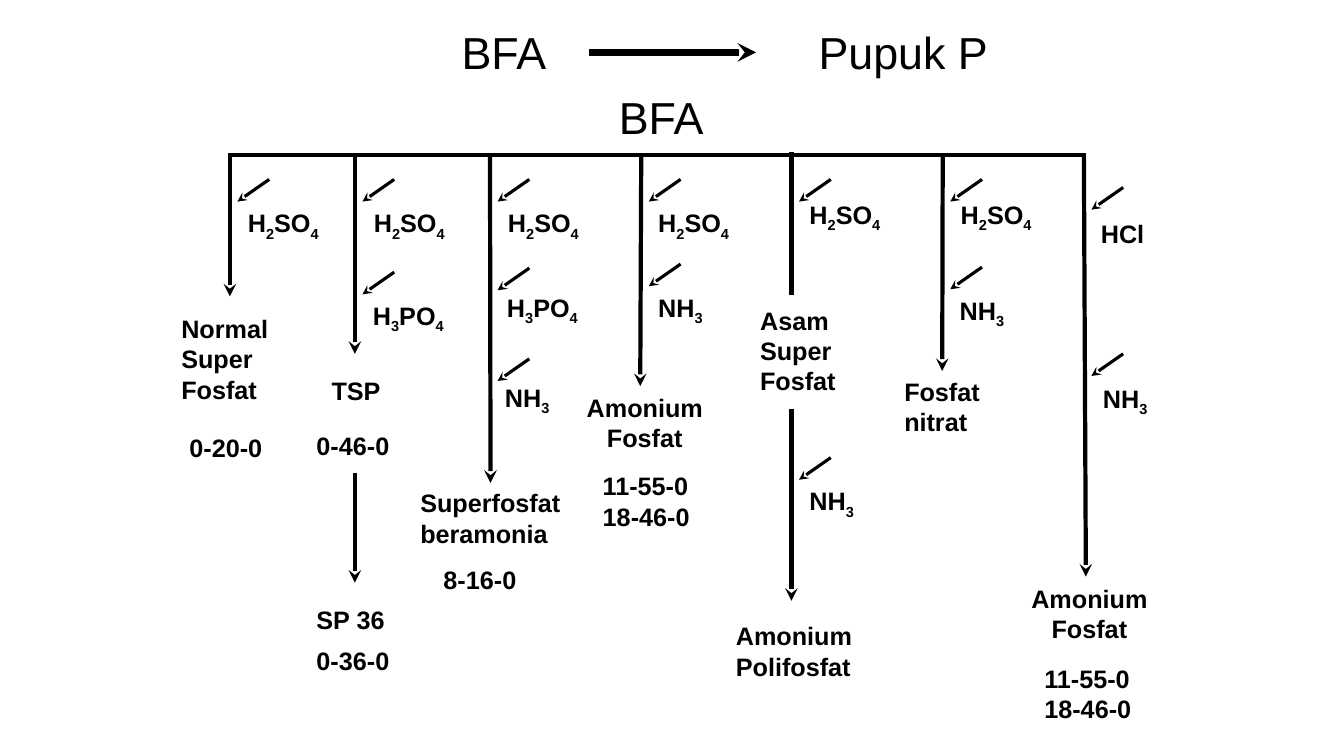
from itertools import groupby
from lxml.etree import SubElement
from pptx import Presentation
from pptx.dml.color import RGBColor
from pptx.enum.shapes import MSO_CONNECTOR as Link
from pptx.enum.text import MSO_AUTO_SIZE as Fit, PP_ALIGN as Align
from pptx.oxml.ns import qn
from pptx.util import Inches, Pt


def tint(code):
    return RGBColor.from_string(code)


class Chart:
    """Draws labels and lines on a slide ruled in columns and rows of a tenth of an inch."""

    font = "Arial"
    ink = "000000"
    unit = Inches(0.1)

    def __init__(self, deck):
        self.slide = deck.slides.add_slide(deck.slide_layouts[6])

    def at(self, *cells):
        return [round(cell * self.unit) for cell in cells]

    def style(self, run, size, bold):
        run.font.name = self.font
        run.font.size = Pt(size)
        run.font.bold = bold
        run.font.color.rgb = tint(self.ink)

    def frame(self, col, row, wide, high):
        box = self.slide.shapes.add_textbox(*self.at(col, row, wide, high))
        box.text_frame.word_wrap = False
        box.text_frame.auto_size = Fit.SHAPE_TO_FIT_TEXT
        return box

    def label(self, text, col, row, wide, size=18, bold=True, mid=False):
        count = text.count("\n") + 1
        box = self.frame(col, row, wide, 1 + count * size / 6)
        box.text_frame.text = text
        for para in box.text_frame.paragraphs:
            para.alignment = Align.CENTER if mid else Align.LEFT
            for run in para.runs:
                self.style(run, size, bold)
        return box

    def title(self, text, col, row, wide):
        return self.label(text, col, row, wide, size=32, bold=False)

    def formula(self, text, col, row):
        wide = {"NH3": 6.5, "HCl": 6.3}.get(text, 9.3)
        para = self.frame(col, row, wide, 4).text_frame.paragraphs[0]
        for low, part in groupby(text, str.isdigit):
            run = para.add_run()
            run.text = "".join(part)
            self.style(run, 18, True)
            if low:
                run.font._element.set("baseline", "-25000")

    def line(self, start, end, width=3, head=True, goal=None):
        line = self.slide.shapes.add_connector(
            Link.STRAIGHT, *self.at(*start, *end))
        line.line.color.rgb = tint(self.ink)
        line.line.width = Pt(width)
        if head:
            SubElement(line.line._get_or_add_ln(), qn("a:tailEnd"), type="stealth")
        SubElement(line._element.spPr, qn("a:effectLst"))
        if goal is not None:
            line.end_connect(goal, 0)

    def dose(self, text, stem, row, col, base):
        self.line((stem + 3.9, row), (stem + 0.75, row + 2.2), width=2.25)
        self.formula(text, col, base)


TITLES = [("BFA", 44.8, 2, 10.7), ("Pupuk P", 80.2, 2, 18.8), ("BFA", 60.4, 8.4, 10.7)]

LABELS = [
    ("Normal\nSuper\nFosfat", 17, 30.6, 11.3),
    ("0-20-0", 17.8, 42.4, 9.2),
    ("TSP", 31.9, 36.7, 6.9),
    ("0-46-0", 30.4, 42.2, 9.2),
    ("SP 36", 30.4, 59.5, 8.8),
    ("0-36-0", 30.4, 63.5, 9.2),
    ("8-16-0", 43, 55.5, 9.2),
    ("11-55-0\n18-46-0", 58.8, 46.2, 10.6),
    ("Asam\nSuper\nFosfat", 74.4, 29.8, 9.5),
    ("Amonium\nPolifosfat", 72, 61.1, 13.5),
    ("11-55-0\n18-46-0", 102.6, 65.3, 10.6),
]

STEMS = [
    (22.8, 22.8, 29.4, [("H2SO4", 17.8, 23.6, 20.1)]),
    (35.2, 35.2, 35.1, [("H2SO4", 17.8, 36.1, 20.1), ("H3PO4", 27, 36, 29.3)]),
    (48.6, 48.6, 47.7, [("H2SO4", 17.8, 49.4, 20.1), ("H3PO4", 26.6, 49.3, 28.5),
                        ("NH3", 35.6, 49.1, 37.4)]),
    (63.6, 63.5, 38.3, [("H2SO4", 17.8, 64.3, 20.1), ("NH3", 26.2, 64.3, 28.5)]),
    (78.5, 78.5, 29.3, [("H2SO4", 17.8, 79.3, 19.3), ("NH3", 45.4, 79.3, 47.7)]),
    (93.5, 93.4, 36.7, [("H2SO4", 17.8, 94.3, 19.3), ("NH3", 26.5, 94.2, 28.8)]),
    (107.5, 107.7, 57.2, [("HCl", 18.6, 108.2, 21.2), ("NH3", 35.1, 108.4, 37.5)]),
]


def main():
    deck = Presentation()
    deck.slide_width, deck.slide_height = Inches(13.33), Inches(7.5)
    chart = Chart(deck)

    for item in TITLES:
        chart.title(*item)
    chart.line((58.4, 5.2), (75, 5.2), width=4.5)

    for item in LABELS:
        chart.label(*item)
    for col, row in [(57.2, 38.4), (101.3, 57.4)]:
        chart.label("Amonium\nFosfat", col, row, 13.5, mid=True)
    goals = {
        48.6: chart.label("Superfosfat\nberamonia", 40.7, 47.9, 15.9),
        93.5: chart.label("Fosfat\nnitrat", 88.7, 36.8, 9.5),
    }

    acid = 78.5
    chart.line((22.6, 15.4), (107.7, 15.4), head=False)
    for stem, foot, end, doses in STEMS:
        top = 15.1 if stem == acid else 15.4
        chart.line((stem, top), (foot, end), head=stem != acid, goal=goals.get(stem))
        for item in doses:
            text, row, col, base = item
            chart.dose(text, stem, row, col, base)
    chart.line((35.2, 46.9), (35.2, 57.8))
    chart.line((acid, 40.6), (acid, 59.6))

    deck.save("out.pptx")


if __name__ == "__main__":
    main()
